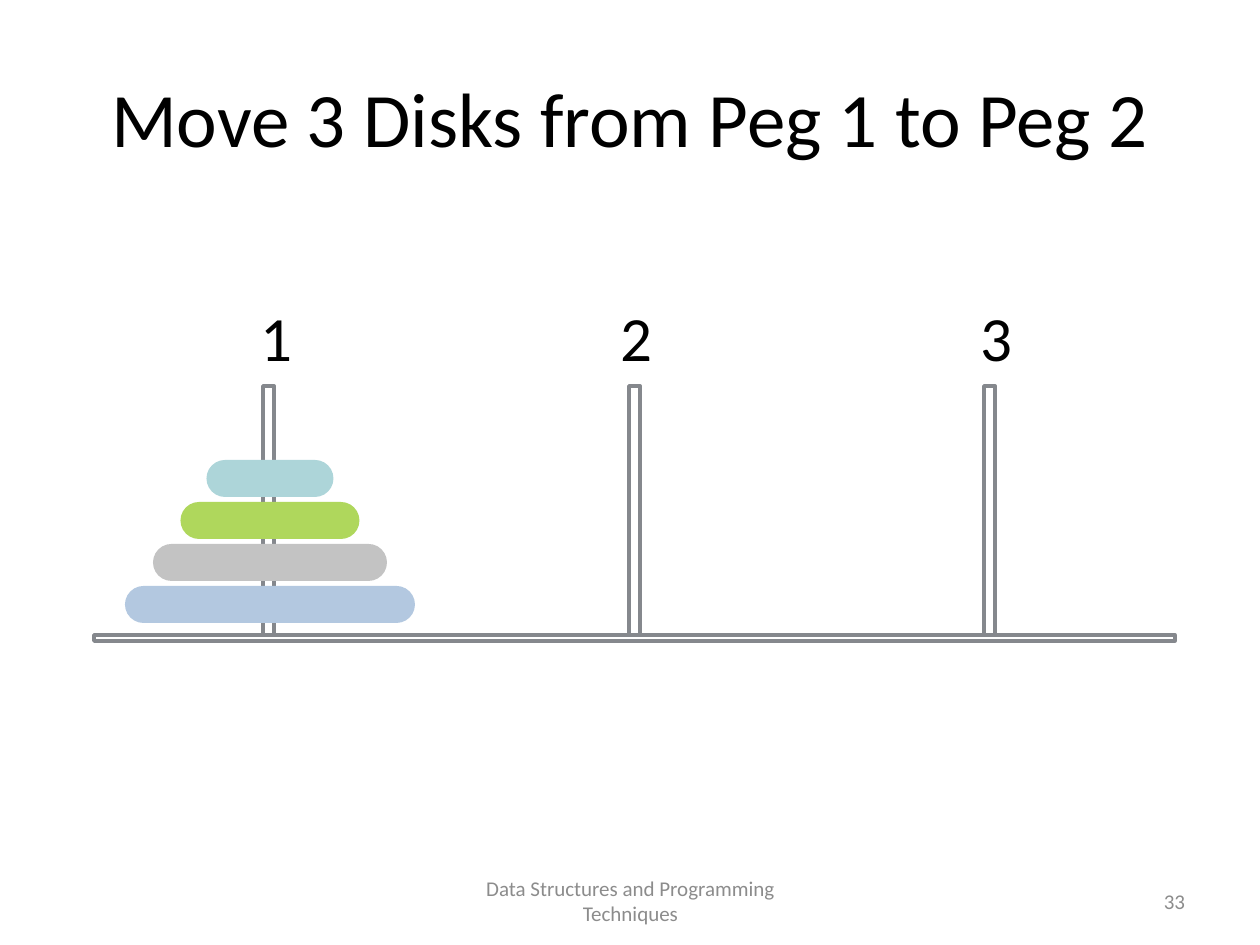
from pptx import Presentation
from pptx.dml.color import RGBColor
from pptx.enum.shapes import MSO_SHAPE
from pptx.enum.text import MSO_ANCHOR, PP_ALIGN
from pptx.util import Emu, Pt

PX_PER_INCH = 126
OUTLINE = "85888D"
MUTED = "8C8C8C"


def px(length):
    """Turn pixels into EMU."""
    return Emu(round(length * 914400 / PX_PER_INCH))


def color(hex_string):
    """Turn a hex string into a colour."""
    return RGBColor.from_string(hex_string)


def add_text(slide, box, text, size, ink="000000", align=PP_ALIGN.CENTER, inset=0, wrap=True):
    """Write one vertically centred paragraph in a box."""
    frame = slide.shapes.add_textbox(*map(px, box)).text_frame
    frame.word_wrap = wrap
    frame.vertical_anchor = MSO_ANCHOR.MIDDLE
    frame.margin_left = frame.margin_right = px(inset)
    frame.margin_top = frame.margin_bottom = px(inset // 2)
    paragraph = frame.paragraphs[0]
    paragraph.text = text
    paragraph.alignment = align
    paragraph.font.name = "Calibri"
    paragraph.font.size = Pt(size)
    paragraph.font.color.rgb = color(ink)


def add_bar(slide, box):
    """Draw an unfilled, outlined bar of the stand."""
    bar = slide.shapes.add_shape(MSO_SHAPE.RECTANGLE, *map(px, box))
    bar.shadow.inherit = False
    bar.fill.background()
    bar.line.color.rgb = color(OUTLINE)
    bar.line.width = Pt(2)


def add_disk(slide, box, fill):
    """Draw a disk as a fully rounded bar."""
    disk = slide.shapes.add_shape(MSO_SHAPE.ROUNDED_RECTANGLE, *map(px, box))
    disk.adjustments[0] = 0.5
    disk.shadow.inherit = False
    disk.fill.solid()
    disk.fill.fore_color.rgb = color(fill)
    disk.line.fill.background()


def add_stand(slide, left, top, width, height):
    """Draw the base and its three pegs."""
    base_height, peg_width = 6, 11
    peg_height = height - base_height
    add_bar(slide, (left, top + peg_height, width, base_height))
    for offset in (169, 535, 890):
        add_bar(slide, (left + offset, top, peg_width, peg_height))


def add_tower(slide, left, top, width, height):
    """Stack the disks, widest at the bottom, centred in the box."""
    disk_height, pitch = 37, 42
    disks = [(290, "B3C8E0"), (234, "C3C3C3"), (179, "AFD75C"), (127, "ADD5D9")]
    for level, (disk_width, fill) in enumerate(disks):
        disk_left = left + (width - disk_width) / 2
        disk_top = top + height - disk_height - level * pitch
        add_disk(slide, (disk_left, disk_top, disk_width, disk_height), fill)


def add_peg_labels(slide, left, top, width, height):
    """Number the pegs at an even pitch across the box."""
    label_width = 34
    pitch = (width - label_width) / 2
    for index in range(3):
        box = (left + index * pitch, top, label_width, height)
        add_text(slide, box, str(index + 1), 36, wrap=False)


def add_footer(slide, left, top, width, height):
    """Write the course name and the slide number."""
    add_text(slide, (left, top, 399, height), "Data Structures and Programming Techniques",
             12, MUTED, inset=12)
    number_width = 294
    add_text(slide, (left + width - number_width, top, number_width, height), "33",
             12, MUTED, PP_ALIGN.RIGHT, inset=12)


def main():
    """Build and save the slide."""
    presentation = Presentation()
    presentation.slide_width = px(1260)
    presentation.slide_height = px(945)
    slide = presentation.slides.add_slide(presentation.slide_layouts[6])
    add_text(slide, (63, 38, 1134, 158), "Move 3 Disks from Peg 1 to Peg 2", 44, inset=12)
    add_stand(slide, 94, 386, 1081, 255)
    add_tower(slide, 125, 460, 290, 163)
    add_peg_labels(slide, 259, 297, 754, 78)
    add_footer(slide, 431, 876, 766, 50)
    presentation.save("out.pptx")


if __name__ == "__main__":
    main()
